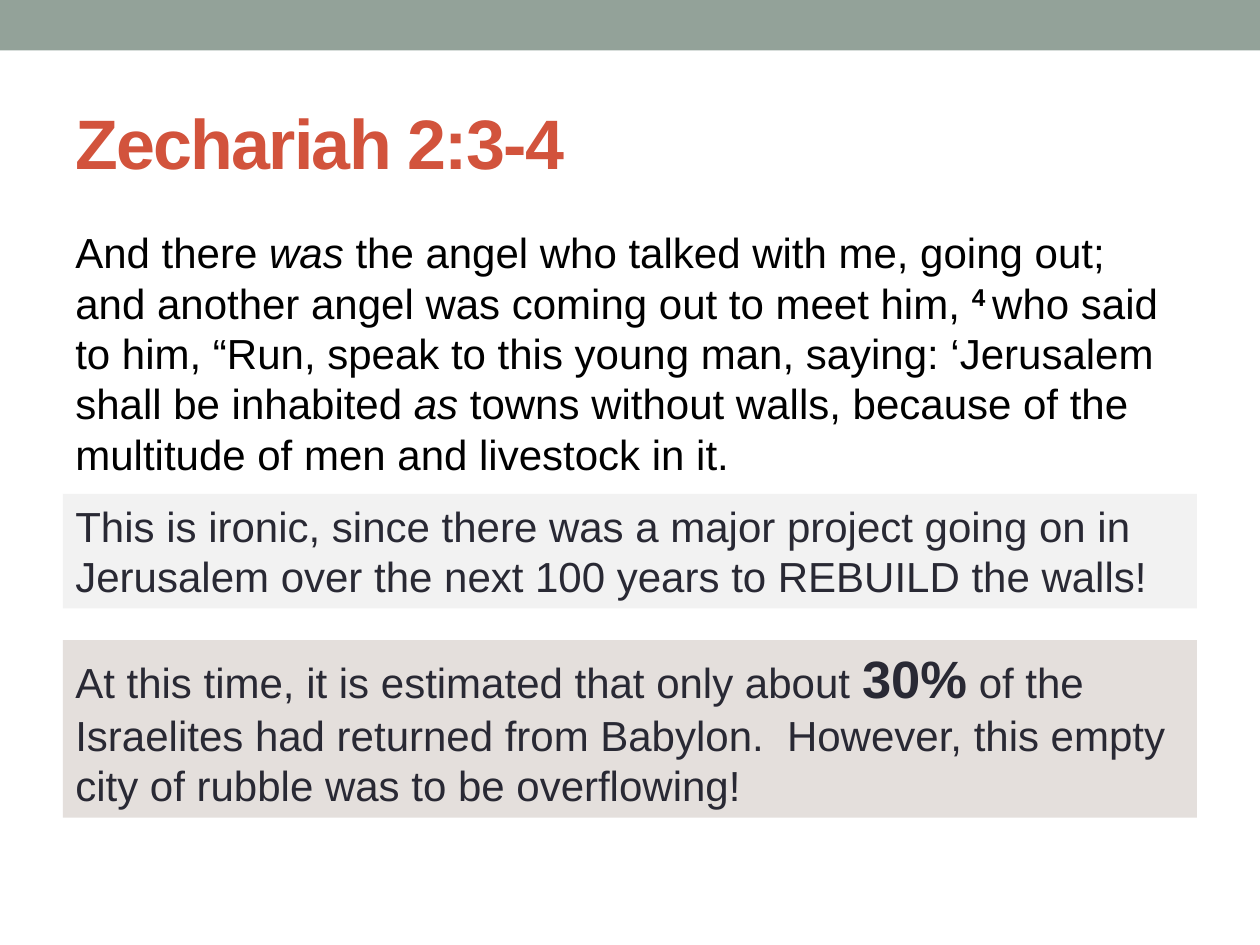
from pptx import Presentation
from pptx.dml.color import RGBColor
from pptx.enum import shapes, text
from pptx.util import Pt

COLORS = {
    "band": "93A299", "title": "D2533C", "verse": "000000",
    "note": "292934", "light": "F2F2F2", "warm": "E4DFDC",
}
SLIDE_WIDTH, SLIDE_HEIGHT = 720, 540
MARGIN = 36
FONT = "Arial"

BLOCKS = [
    {"top": 41.76, "height": 77.76, "color": "title", "size": 40,
     "frame": {"vertical_anchor": text.MSO_ANCHOR.MIDDLE},
     "runs": [("Zechariah 2:3-4", {"bold": True}, {"spc": "-100"})]},
    {"top": 126, "height": 216, "color": "verse", "size": 24,
     "paragraph": {"space_before": Pt(4.8)},
     "runs": [
         ("And there ", {}, {}),
         ("was", {"italic": True}, {}),
         (" the angel who talked with me, going out; and another angel "
          "was coming out to meet him, ", {}, {}),
         ("4 ", {"bold": True}, {"baseline": "30000"}),
         ("who said to him, “Run, speak to this young man, saying: "
          "‘Jerusalem shall be inhabited ", {}, {}),
         ("as", {"italic": True}, {}),
         (" towns without walls, because of the multitude of men and "
          "livestock in it. ", {}, {})]},
    {"top": 282.24, "height": 65.44, "color": "note", "size": 24, "fill": "light",
     "frame": {"auto_size": text.MSO_AUTO_SIZE.SHAPE_TO_FIT_TEXT},
     "runs": [("This is ironic, since there was a major project going on in "
               "Jerusalem over the next 100 years to REBUILD the walls!", {}, {})]},
    {"top": 365.76, "height": 101.52, "color": "note", "size": 24, "fill": "warm",
     "frame": {"auto_size": text.MSO_AUTO_SIZE.SHAPE_TO_FIT_TEXT},
     "runs": [
         ("At this time, it is estimated that only about ", {}, {}),
         ("30%", {"bold": True, "size": Pt(30)}, {}),
         (" of the Israelites had returned from Babylon.  However, this "
          "empty city of rubble was to be overflowing!", {}, {})]},
]


def set_all(target, values):
    for name, value in values.items():
        setattr(target, name, value)


def add_rectangle(slide, left, top, width, height, fill):
    shape = slide.shapes.add_shape(
        shapes.MSO_SHAPE.RECTANGLE, Pt(left), Pt(top), Pt(width), Pt(height))
    shape.shadow.inherit = False
    shape.fill.solid()
    shape.fill.fore_color.rgb = RGBColor.from_string(COLORS[fill])
    shape.line.fill.background()
    return shape


def add_block(slide, block):
    place = MARGIN, block["top"], SLIDE_WIDTH - 2 * MARGIN, block["height"]
    if "fill" in block:
        shape = add_rectangle(slide, *place, block["fill"])
    else:
        shape = slide.shapes.add_textbox(*map(Pt, place))
    frame = shape.text_frame
    set_all(frame, {"word_wrap": True, "vertical_anchor": text.MSO_ANCHOR.TOP,
                    **block.get("frame", {})})
    paragraph = frame.paragraphs[0]
    set_all(paragraph, {"alignment": text.PP_ALIGN.LEFT, **block.get("paragraph", {})})
    for words, font_format, extras in block["runs"]:
        run = paragraph.add_run()
        run.text = words
        set_all(run.font, {"name": FONT, "size": Pt(block["size"]), **font_format})
        run.font.color.rgb = RGBColor.from_string(COLORS[block["color"]])
        for name, value in extras.items():
            run._r.get_or_add_rPr().set(name, value)


def main():
    presentation = Presentation()
    set_all(presentation, {"slide_width": Pt(SLIDE_WIDTH), "slide_height": Pt(SLIDE_HEIGHT)})
    slide = presentation.slides.add_slide(presentation.slide_layouts[6])
    add_rectangle(slide, 0, 0, SLIDE_WIDTH, 28.8, "band")
    for block in BLOCKS:
        add_block(slide, block)
    presentation.save("out.pptx")


if __name__ == "__main__":
    main()
